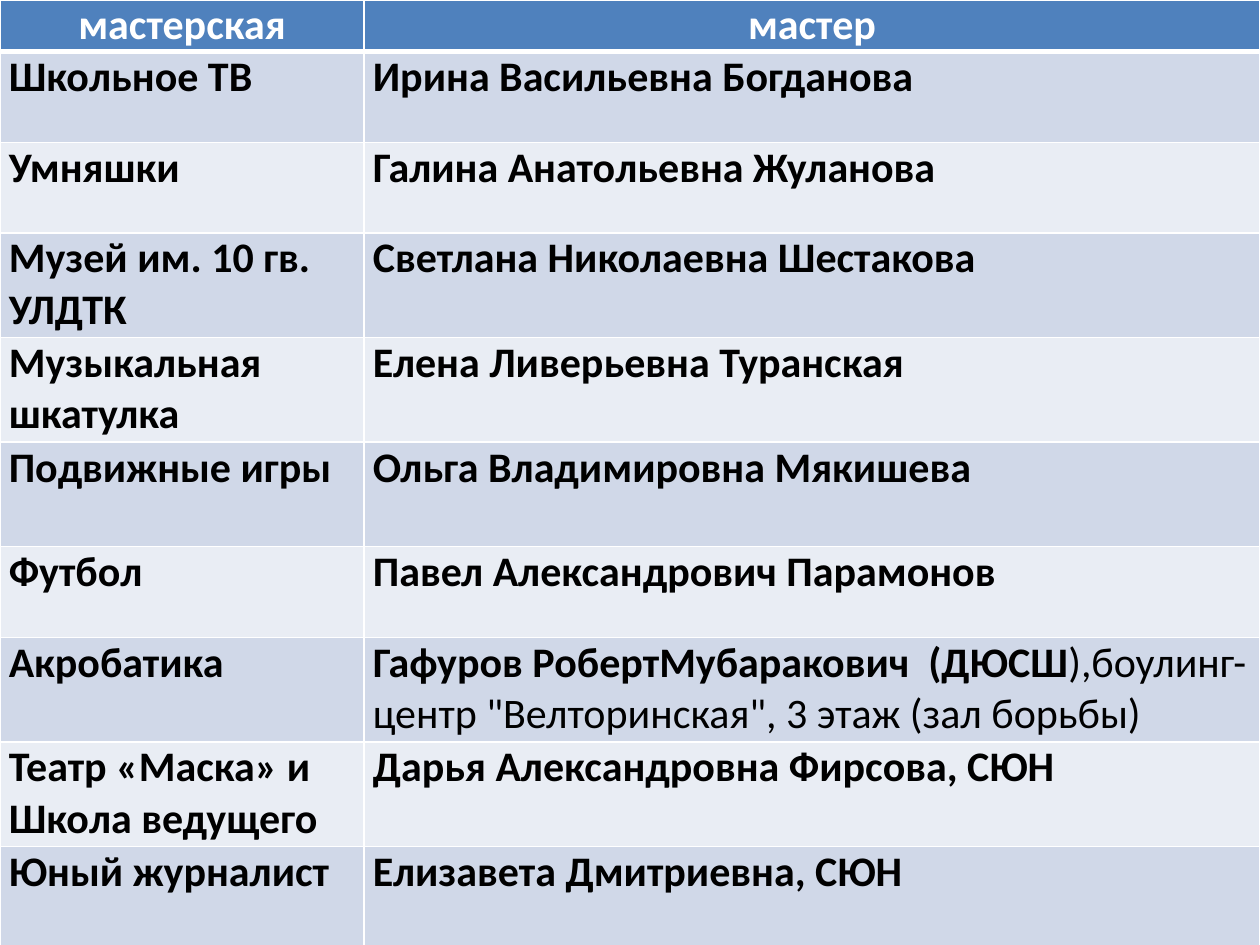
from dataclasses import dataclass

import pptx
import pptx.dml.color
import pptx.enum.text
import pptx.oxml
import pptx.oxml.ns
import pptx.util
from pptx.util import Inches


@dataclass(frozen=True)
class Theme:
    font: str = "Calibri"
    size: int = 24
    header_fill: str = "4F81BD"
    header_text: str = "FFFFFF"
    body_text: str = "000000"
    bands: tuple = ("D0D8E8", "E9EDF4")
    border: str = "FFFFFF"
    border_width: int = 1
    header_rule: int = 3


THEME = Theme()
CELL_FORMAT = {"margin_left": Inches(0.07), "margin_right": Inches(0.07),
               "margin_top": 0, "margin_bottom": 0}
FONT_FORMAT = {"name": THEME.font, "size": pptx.util.Pt(THEME.size)}

HEADERS = ("мастерская", "мастер")
# Workshop, master, optional regular-weight ending, row height
WORKSHOPS = [
    ("Школьное ТВ", "Ирина Васильевна Богданова", "", 0.72),
    ("Умняшки", "Галина Анатольевна Жуланова", "", 0.72),
    ("Музей им. 10 гв. УЛДТК", "Светлана Николаевна Шестакова", "", 0.83),
    ("Музыкальная шкатулка", "Елена Ливерьевна Туранская", "", 0.83),
    ("Подвижные игры", "Ольга Владимировна Мякишева", "", 0.83),
    ("Футбол", "Павел Александрович Парамонов", "", 0.72),
    ("Акробатика", "Гафуров РобертМубаракович  (ДЮСШ",
     "),боулинг-центр \"Велторинская\", 3 этаж (зал борьбы)", 0.83),
    ("Театр «Маска» и\nШкола ведущего", "Дарья Александровна Фирсова, СЮН", "", 0.83),
    ("Юный журналист", "Елизавета Дмитриевна, СЮН", "", 0.83),
]
HEADER_HEIGHT = 0.41
WORKSHOP_SHARE = 0.289


def rgb(value):
    return pptx.dml.color.RGBColor.from_string(value)


def set_format(target, values):
    for attribute, value in values.items():
        setattr(target, attribute, value)


def add_run(paragraph, text, color, bold=True):
    run = paragraph.add_run()
    run.text = text
    set_format(run.font, {**FONT_FORMAT, "bold": bold})
    run.font.color.rgb = rgb(color)


def set_borders(cell, bottom_width):
    """Border lines come before the fill in the cell properties."""
    properties = cell._tc.get_or_add_tcPr()
    widths = {"lnL": THEME.border_width, "lnR": THEME.border_width,
              "lnT": THEME.border_width, "lnB": bottom_width}
    for index, (side, width) in enumerate(widths.items()):
        line = pptx.oxml.parse_xml(
            f'<a:{side} {pptx.oxml.ns.nsdecls("a")} w="{pptx.util.Pt(width)}">'
            f'<a:solidFill><a:srgbClr val="{THEME.border}"/></a:solidFill></a:{side}>')
        properties.insert(index, line)


def fill_cell(cell, text, fill, color, ending="", align=None,
              bottom_width=THEME.border_width):
    set_format(cell, CELL_FORMAT)
    cell.fill.solid()
    cell.fill.fore_color.rgb = rgb(fill)
    set_borders(cell, bottom_width)
    frame = cell.text_frame
    for index, line in enumerate(text.split("\n")):
        paragraph = frame.add_paragraph() if index else frame.paragraphs[0]
        paragraph.alignment = align
        add_run(paragraph, line, color)
    if ending:
        add_run(paragraph, ending, color, bold=False)


def add_workshop_table(slide, left, top, width, height):
    table = slide.shapes.add_table(
        len(WORKSHOPS) + 1, len(HEADERS), left, top, width, height).table
    workshop_width = int(width * WORKSHOP_SHARE)
    table.columns[0].width = workshop_width
    table.columns[1].width = width - workshop_width

    # Header row
    table.rows[0].height = Inches(HEADER_HEIGHT)
    for column, title in enumerate(HEADERS):
        fill_cell(table.cell(0, column), title, THEME.header_fill,
                  THEME.header_text, align=pptx.enum.text.PP_ALIGN.CENTER,
                  bottom_width=THEME.header_rule)

    # Workshops in alternating bands
    for row, (workshop, master, ending, row_height) in enumerate(WORKSHOPS, 1):
        table.rows[row].height = Inches(row_height)
        band = THEME.bands[(row - 1) % 2]
        fill_cell(table.cell(row, 0), workshop, band, THEME.body_text)
        fill_cell(table.cell(row, 1), master, band, THEME.body_text, ending)


def main():
    deck = pptx.Presentation()
    deck.slide_width, deck.slide_height = Inches(10), Inches(7.5)
    slide = deck.slides.add_slide(deck.slide_layouts[6])
    add_workshop_table(slide, Inches(0), Inches(0),
                       deck.slide_width, deck.slide_height)
    deck.save("out.pptx")


if __name__ == "__main__":
    main()
